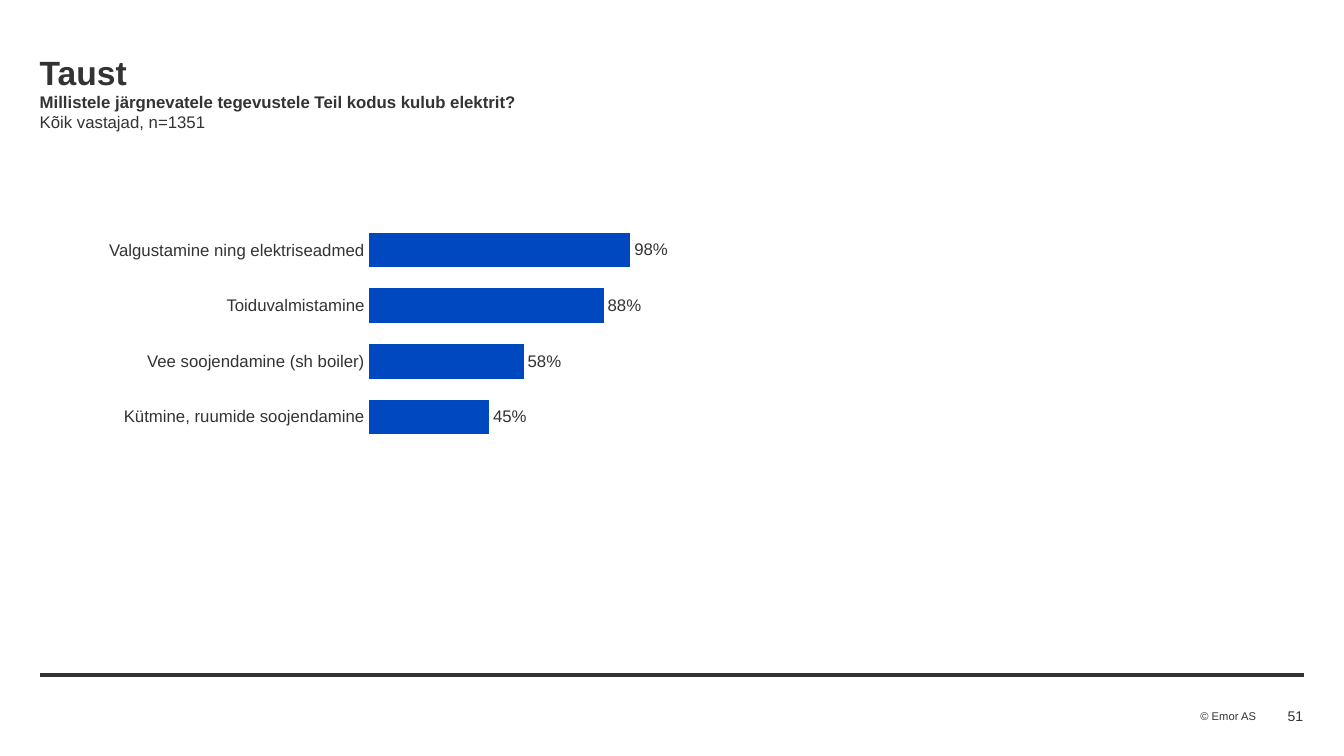
from copy import deepcopy

from lxml import etree
from pptx import Presentation
from pptx.chart.data import CategoryChartData
from pptx.dml.color import RGBColor
from pptx.enum.chart import XL_CHART_TYPE, XL_LABEL_POSITION
from pptx.enum.shapes import MSO_CONNECTOR
from pptx.enum.text import MSO_ANCHOR, MSO_AUTO_SIZE, PP_ALIGN
from pptx.oxml import parse_xml
from pptx.oxml.ns import nsdecls, qn
from pptx.util import Cm, Pt

BAR_CLUSTERED = XL_CHART_TYPE.BAR_CLUSTERED
OUTSIDE_END = XL_LABEL_POSITION.OUTSIDE_END
STRAIGHT = MSO_CONNECTOR.STRAIGHT
TOP, MIDDLE = MSO_ANCHOR.TOP, MSO_ANCHOR.MIDDLE
LEFT, RIGHT = PP_ALIGN.LEFT, PP_ALIGN.RIGHT
NO_AUTOFIT = MSO_AUTO_SIZE.NONE

FONT = "Arial"
INK = "333333"
BLUE = "0048BF"
MARGIN = 1.0
RIGHT_EDGE = 32.86

HEADING = [
    ("Taust", 24, True),
    ("Millistele järgnevatele tegevustele Teil kodus kulub elektrit?", 12, True),
    ("Kõik vastajad, n=1351", 12, False),
]
ELECTRICITY_USES = [
    ("Valgustamine ning elektriseadmed", 98),
    ("Toiduvalmistamine", 88),
    ("Vee soojendamine (sh boiler)", 58),
    ("Kütmine, ruumide soojendamine", 45),
]


def color(hex_string):
    return RGBColor.from_string(hex_string)


def style(font, size, bold=False):
    font.name = FONT
    font.size = Pt(size)
    font.bold = bold
    font.color.rgb = color(INK)


def set_insets(frame, left, top, right, bottom):
    frame.margin_left, frame.margin_top = Cm(left), Cm(top)
    frame.margin_right, frame.margin_bottom = Cm(right), Cm(bottom)


def add_heading(slide):
    heading = slide.shapes.title
    heading.left, heading.top = Cm(MARGIN), Cm(1.2)
    heading.width, heading.height = Cm(RIGHT_EDGE - MARGIN), Cm(1.12)
    frame = heading.text_frame
    frame.auto_size = NO_AUTOFIT
    frame.word_wrap = True
    frame.vertical_anchor = TOP
    set_insets(frame, 0, 0.1, 0, 0)
    paragraph = frame.paragraphs[0]
    paragraph.alignment = LEFT
    paragraph.line_spacing = 1.0
    paragraph.space_before = Pt(0)
    for index, (text, size, bold) in enumerate(HEADING):
        if index:
            paragraph.add_line_break()
            paragraph._p.findall(qn("a:br"))[-1].append(deepcopy(run.font._element))
        run = paragraph.add_run()
        run.text = text
        style(run.font, size, bold)


def add_label(slide, text, left, top, width, height, size, align, wrap):
    label = slide.shapes.add_textbox(Cm(left), Cm(top), Cm(width), Cm(height))
    frame = label.text_frame
    frame.word_wrap = wrap
    frame.vertical_anchor = MIDDLE
    set_insets(frame, 0, 0, 0, 0)
    paragraph = frame.paragraphs[0]
    paragraph.text = text
    paragraph.alignment = align
    style(paragraph.font, size)


def add_footer_rule(slide):
    rule = slide.shapes.add_connector(
        STRAIGHT, Cm(MARGIN), Cm(17), Cm(RIGHT_EDGE), Cm(17))
    rule.line.color.rgb = color(INK)
    rule.line.width = Pt(3)
    etree.SubElement(rule._element.spPr, qn("a:effectLst"))


def add_use_table(slide):
    widths = [7.29, 6.12, 1.57]
    row_height = 1.4
    count = len(ELECTRICITY_USES)
    uses = slide.shapes.add_table(
        count, len(widths), Cm(1.93), Cm(5.59),
        Cm(sum(widths)), Cm(count * row_height)).table
    uses.first_row = False
    uses.horz_banding = False
    for column, width in zip(uses.columns, widths):
        column.width = Cm(width)
    for row, (use, _) in zip(uses.rows, ELECTRICITY_USES):
        row.height = Cm(row_height)
        for cell in row.cells:
            cell.fill.background()
            cell.vertical_anchor = MIDDLE
            set_insets(cell, 0.03, 0.03, 0.03, 0)
        paragraph = row.cells[0].text_frame.paragraphs[0]
        paragraph.text = use
        paragraph.alignment = RIGHT
        style(paragraph.font, 12)


def set_plot_layout(chart, x, y, w, h):
    plot_area = chart._chartSpace.chart.plotArea
    for old_layout in plot_area.findall(qn("c:layout")):
        plot_area.remove(old_layout)
    modes = '<c:xMode val="edge"/><c:yMode val="edge"/>'
    sizes = "".join(f'<c:{key} val="{value}"/>'
                    for key, value in zip("xywh", (x, y, w, h)))
    plot_area.insert(0, parse_xml(
        f'<c:layout {nsdecls("c")}><c:manualLayout>'
        f'<c:layoutTarget val="inner"/>{modes}{sizes}'
        f'</c:manualLayout></c:layout>'))


def add_share_chart(slide):
    data = CategoryChartData()
    data.categories = [str(n + 1) for n in range(len(ELECTRICITY_USES))]
    data.add_series("Series 1", [share for _, share in ELECTRICITY_USES])
    chart = slide.shapes.add_chart(
        BAR_CLUSTERED, Cm(8.79), Cm(5.36), Cm(8.59), Cm(5.97), data).chart
    style(chart.font, 10)
    chart.has_legend = False
    chart.has_title = False
    chart.category_axis.reverse_order = True
    chart.value_axis.minimum_scale = 0
    chart.value_axis.maximum_scale = 110
    for axis in (chart.category_axis, chart.value_axis):
        axis.has_major_gridlines = False
        axis.visible = False
    plot = chart.plots[0]
    plot.gap_width = 60
    plot.vary_by_categories = False
    shares = plot.series[0]
    shares.format.fill.solid()
    shares.format.fill.fore_color.rgb = color(BLUE)
    labels = shares.data_labels
    labels.show_value = True
    labels.number_format = "0\\%"
    labels.number_format_is_linked = False
    labels.position = OUTSIDE_END
    style(labels.font, 12)
    set_plot_layout(chart, 0.06, 0.04, 0.86, 0.94)


def main():
    presentation = Presentation()
    presentation.slide_width = Cm(33.87)
    presentation.slide_height = Cm(19.05)
    slide = presentation.slides.add_slide(presentation.slide_layouts[5])
    add_footer_rule(slide)
    add_label(slide, "© Emor AS", 30.25, 17.88, 1.42, 0.33, 8, LEFT, False)
    add_heading(slide)
    add_use_table(slide)
    add_share_chart(slide)
    add_label(slide, "51", 30.15, 17.75, 2.69, 0.56, 10, RIGHT, True)
    presentation.save("out.pptx")


if __name__ == "__main__":
    main()
